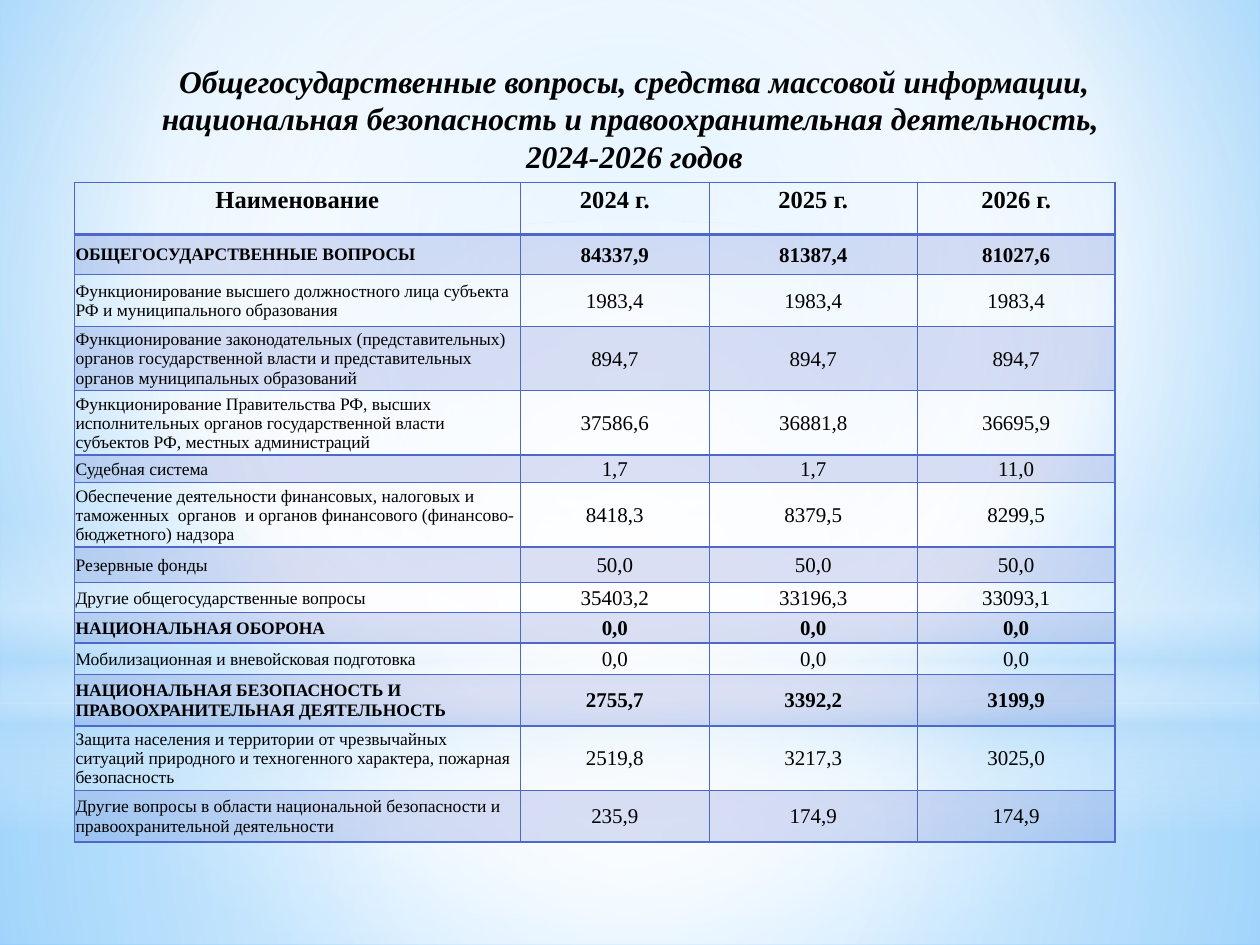
from lxml import etree
from pptx import Presentation
from pptx.dml.color import RGBColor
from pptx.enum import shapes, text
from pptx.oxml import ns, parse_xml
from pptx.util import Inches, Pt

FONT = "Times New Roman"
HUES = {"ink": "000000", "rule": "4E67C8", "white": "FFFFFF",
        "pale": "B4DCFA", "sky": "9ED5FF", "deep": "5BB9FF"}
CIRCLE = (50, 50, 50, 50)
TITLE = ("Общегосударственные вопросы, средства массовой информации, "
         "национальная безопасность и правоохранительная деятельность, \v2024-2026 годов")
COLS = (3.54, 1.5, 1.65, 1.57)
HEAD = ("Наименование", "2024 г.", "2025 г.", "2026 г.")
ROWS = [
    (0.32, "ОБЩЕГОСУДАРСТВЕННЫЕ ВОПРОСЫ", "84337,9", "81387,4", "81027,6"),
    (0.41, "Функционирование высшего должностного лица субъекта  РФ и муниципального образования",
     "1983,4", "1983,4", "1983,4"),
    (0.41, "Функционирование законодательных (представительных) органов государственной власти "
     "и представительных органов муниципальных образований", "894,7", "894,7", "894,7"),
    (0.41, "Функционирование Правительства РФ, высших исполнительных органов государственной "
     "власти субъектов РФ, местных администраций", "37586,6", "36881,8", "36695,9"),
    (0.22, "Судебная система", "1,7", "1,7", "11,0"),
    (0.39, "Обеспечение деятельности финансовых, налоговых и  таможенных  органов  и органов "
     "финансового (финансово-бюджетного) надзора", "8418,3", "8379,5", "8299,5"),
    (0.28, "Резервные фонды", "50,0", "50,0", "50,0"),
    (0.24, "Другие общегосударственные вопросы", "35403,2", "33196,3", "33093,1"),
    (0.24, "НАЦИОНАЛЬНАЯ ОБОРОНА", "0,0", "0,0", "0,0"),
    (0.25, "Мобилизационная и вневойсковая подготовка", "0,0", "0,0", "0,0"),
    (0.41, "НАЦИОНАЛЬНАЯ БЕЗОПАСНОСТЬ И ПРАВООХРАНИТЕЛЬНАЯ ДЕЯТЕЛЬНОСТЬ",
     "2755,7", "3392,2", "3199,9"),
    (0.41, "Защита населения и территории от чрезвычайных ситуаций природного и техногенного "
     "характера, пожарная безопасность", "2519,8", "3217,3", "3025,0"),
    (0.41, "Другие вопросы в области национальной безопасности и правоохранительной деятельности",
     "235,9", "174,9", "174,9"),
]


def color(name):
    return RGBColor.from_string(HUES[name])


def blend(holder, stops, rect=None):
    marks = "".join(
        f'<a:gs pos="{pos * 1000}"><a:srgbClr val="{HUES[hue]}">'
        f'<a:alpha val="{alpha * 1000}"/></a:srgbClr></a:gs>'
        for pos, hue, alpha in stops)
    if rect:
        sides = " ".join(f'{side}="{val * 1000}"' for side, val in zip("ltrb", rect))
        way = f'<a:path path="circle"><a:fillToRect {sides}/></a:path>'
    else:
        way = '<a:lin ang="5400000" scaled="0"/>'
    grad = parse_xml(f'<a:gradFill {ns.nsdecls("a")} rotWithShape="1">'
                     f'<a:gsLst>{marks}</a:gsLst>{way}</a:gradFill>')
    holder.replace(holder.find(ns.qn("a:solidFill")), grad)


def add_glow(slide, kind, box, stops, rect=None):
    glow = slide.shapes.add_shape(kind, *map(Inches, box))
    glow.shadow.inherit = False
    glow.line.fill.background()
    glow.fill.solid()
    blend(glow.element.spPr, stops, rect)


def add_back(slide, wide, high):
    slide.background.fill.solid()
    blend(slide.element.xpath(".//p:bgPr")[0],
          [(0, "sky", 100), (60, "white", 100), (100, "deep", 100)], (20, 10, 20, 60))
    rect, oval = shapes.MSO_SHAPE.RECTANGLE, shapes.MSO_SHAPE.OVAL
    split = 5.58
    add_glow(slide, rect, (0, split, wide, high - split),
             [(0, "white", 91), (37, "white", 76), (100, "pale", 79)], CIRCLE)
    add_glow(slide, rect, (0, 0, wide, split),
             [(0, "white", 89), (48, "white", 62), (100, "pale", 79)], CIRCLE)
    add_glow(slide, rect, (0, 4.12, wide, 2.5),
             [(0, "white", 0), (29, "white", 30), (45, "pale", 40),
              (55, "white", 26), (65, "pale", 60), (100, "white", 0)])
    add_glow(slide, oval, (0, 1.75, wide, split),
             [(0, "white", 100), (56, "white", 0)], CIRCLE)


def style(para, size, bold, italic=False):
    for run in para.runs:
        font = run.font
        font.name, font.size = FONT, Pt(size)
        font.bold, font.italic = bold, italic
        font.color.rgb = color("ink")


def add_title(slide, box):
    frame = slide.shapes.add_textbox(*map(Inches, box)).text_frame
    frame.word_wrap = True
    frame.auto_size = text.MSO_AUTO_SIZE.SHAPE_TO_FIT_TEXT
    para = frame.paragraphs[0]
    para.text = TITLE
    para.alignment = text.PP_ALIGN.CENTER
    style(para, 18, True, True)


def edge(cell, widths):
    props = cell._tc.get_or_add_tcPr()
    for spot, (side, width) in enumerate(zip("LRTB", widths)):
        line = parse_xml(
            f'<a:ln{side} {ns.nsdecls("a")} w="{Pt(width)}"><a:solidFill>'
            f'<a:srgbClr val="{HUES["rule"]}"/></a:solidFill></a:ln{side}>')
        props.insert(spot, line)


def tint(cell):
    cell.fill.solid()
    cell.fill.fore_color.rgb = color("rule")
    hue = cell._tc.tcPr.find(f'{ns.qn("a:solidFill")}/{ns.qn("a:srgbClr")}')
    etree.SubElement(hue, ns.qn("a:alpha"), val="20000")


def fill_cell(cell, words, row, col):
    head = row == 0
    para = cell.text_frame.paragraphs[0]
    para.text = words
    cell.margin_left = cell.margin_right = Inches(0.06 if head else 0.01)
    cell.margin_top = Inches(0 if head else 0.01)
    cell.margin_bottom = 0
    if head or col:
        para.alignment = text.PP_ALIGN.CENTER
    else:
        para.alignment = text.PP_ALIGN.LEFT
    if head:
        para.line_spacing = 1.15
    else:
        cell.vertical_anchor = text.MSO_ANCHOR.MIDDLE
    if row % 2:
        tint(cell)
    else:
        cell.fill.background()
    edge(cell, (1, 1, 2 if row == 1 else 1, 2 if head else 1))


def add_grid(slide, box):
    rows = [(0.41, *HEAD)] + ROWS
    grid = slide.shapes.add_table(len(rows), len(COLS), *map(Inches, box)).table
    grid.first_row = grid.horz_banding = False
    for col, width in zip(grid.columns, COLS):
        col.width = Inches(width)
    for row, (height, *cells) in enumerate(rows):
        grid.rows[row].height = Inches(height)
        bold = cells[0].isupper() or row == 0
        for col, words in enumerate(cells):
            cell = grid.cell(row, col)
            fill_cell(cell, words, row, col)
            size = 14 if row == 0 else 12 if col else 10
            style(cell.text_frame.paragraphs[0], size, bold)


def main():
    deck = Presentation()
    wide, high = 10, 7.5
    deck.slide_width, deck.slide_height = Inches(wide), Inches(high)
    slide = deck.slides.add_slide(deck.slide_layouts[6])
    add_back(slide, wide, high)
    add_title(slide, (0.98, 0.44, 8.11, 1.01))
    add_grid(slide, (0.59, 1.45, 8.27, 5.19))
    deck.save("out.pptx")


if __name__ == "__main__":
    main()
